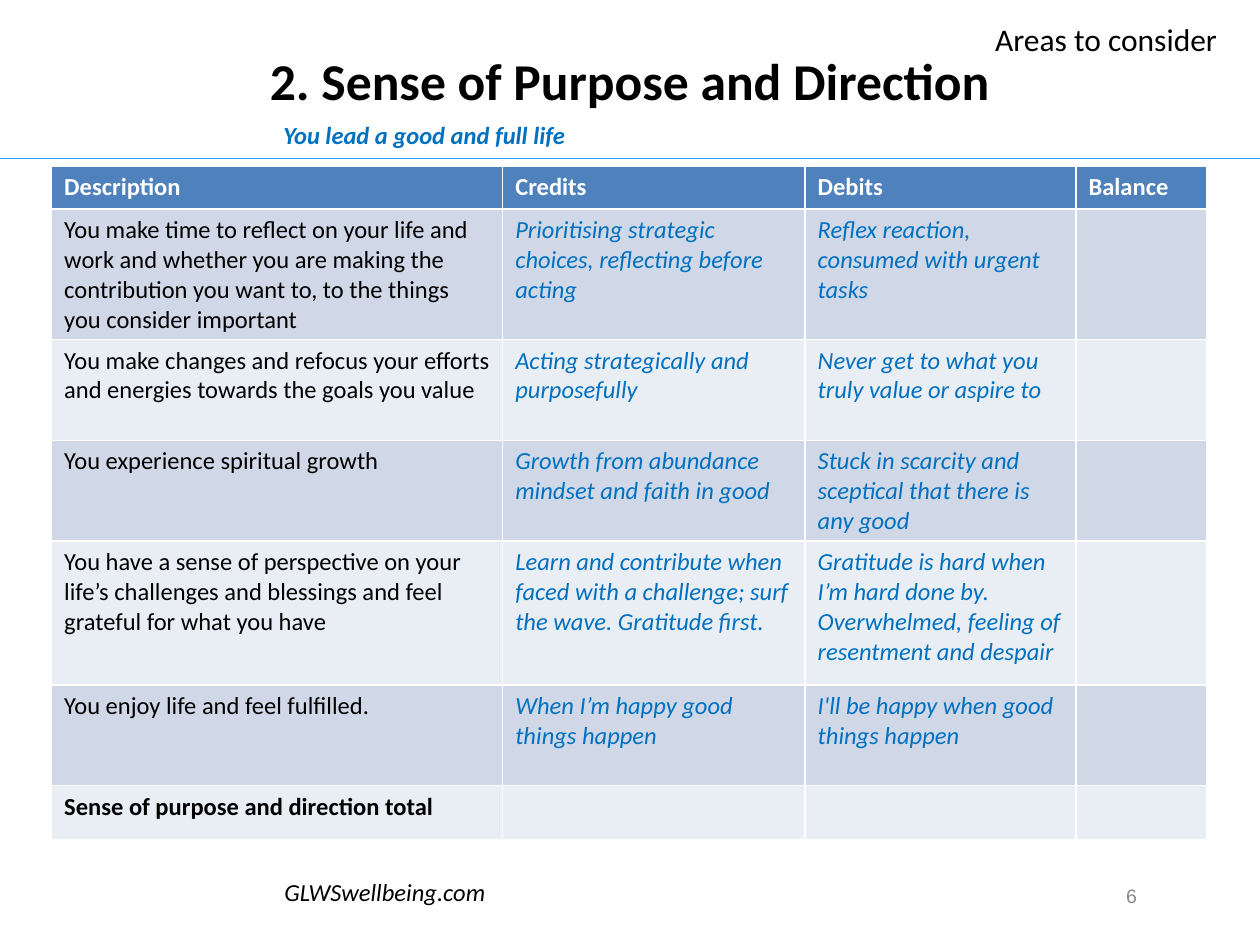
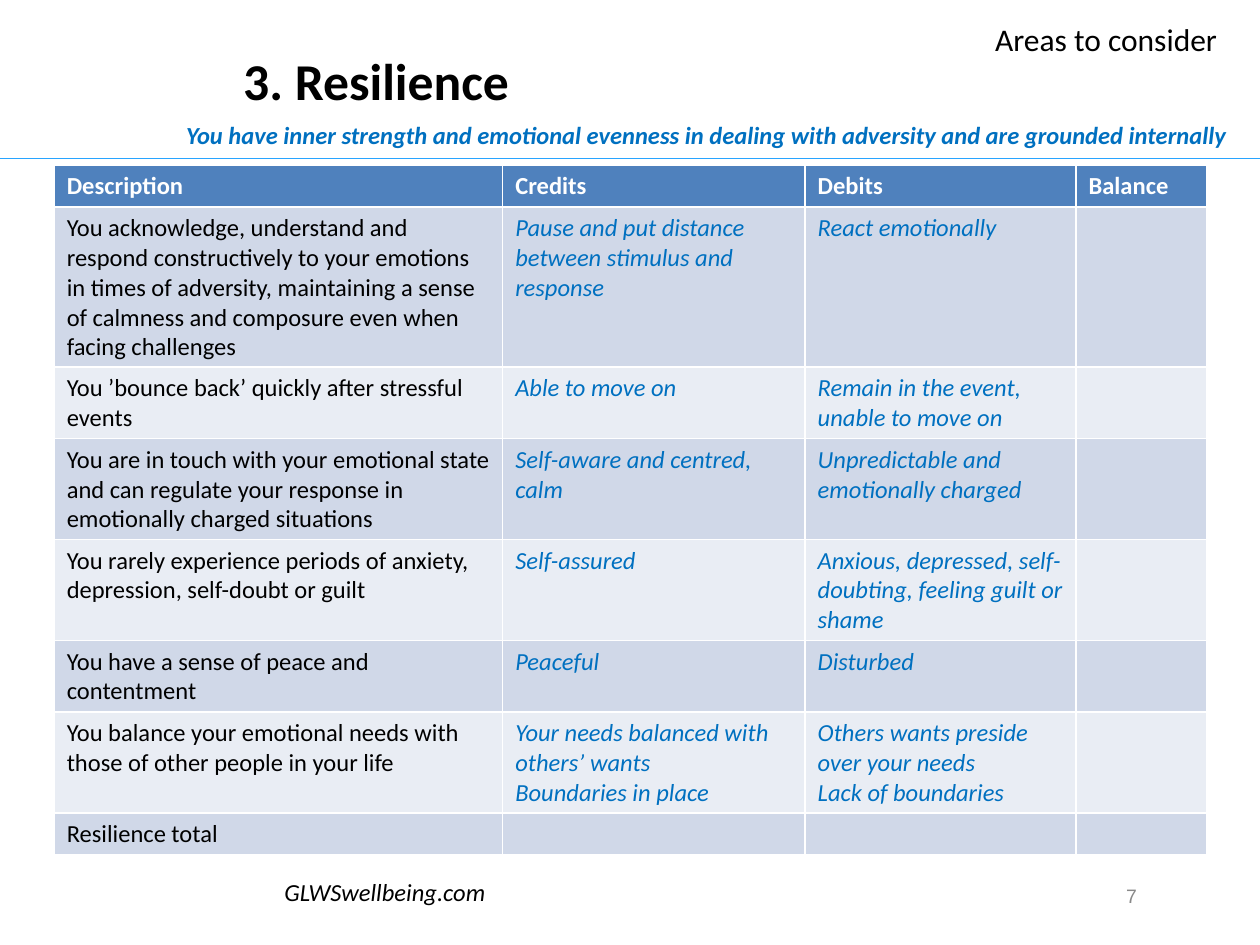
from lxml import etree
from pptx import Presentation
from pptx.dml.color import RGBColor
from pptx.enum.shapes import MSO_CONNECTOR as CONN
from pptx.enum.text import MSO_ANCHOR as ANCHOR, MSO_AUTO_SIZE as AUTO, PP_ALIGN as ALIGN
from pptx.oxml.ns import qn
from pptx.util import Inches, Pt

COLS, ROWS = 10, 7.5
SLIDE_W, SLIDE_H = Inches(10), Inches(7.5)

BLACK = RGBColor(0x00, 0x00, 0x00)
WHITE = RGBColor(0xFF, 0xFF, 0xFF)
GREY = RGBColor(0x89, 0x89, 0x89)
TEXT_BLUE = RGBColor(0x00, 0x70, 0xC0)
RULE_BLUE = RGBColor(0x28, 0xA4, 0xFF)
HEADER_BLUE = RGBColor(0x4F, 0x81, 0xBD)
BANDS = (RGBColor(0xD0, 0xD8, 0xE8), RGBColor(0xE9, 0xED, 0xF4))

TITLE_LAYOUT = 5
BODY_SIZE = 14
RULE_Y = 1.26
HEADINGS = ("Description", "Credits", "Debits", "Balance")

PURPOSE_ROWS = [
    ("You make time to reflect on your life and work and whether you are making the "
     "contribution you want to, to the things you consider important",
     "Prioritising strategic choices, reflecting before acting",
     "Reflex reaction, consumed with urgent tasks"),
    ("You make changes and refocus your efforts and energies towards the goals you value",
     "Acting strategically and purposefully",
     "Never get to what you truly value or aspire to"),
    ("You experience spiritual growth",
     "Growth from abundance mindset and faith in good",
     "Stuck in scarcity and sceptical that there is any good"),
    ("You have a sense of perspective on your life’s challenges and blessings and feel "
     "grateful for what you have",
     "Learn and contribute when faced with a challenge; surf the wave. Gratitude first.",
     "Gratitude is hard when I’m hard done by. Overwhelmed, feeling of resentment and despair"),
    ("You enjoy life and feel fulfilled.",
     "When I’m happy good things happen",
     "I'll be happy when good things happen"),
    ("Sense of purpose and direction total",),
]

RESILIENCE_ROWS = [
    ("You acknowledge, understand and respond constructively to your emotions in times of "
     "adversity, maintaining a sense of calmness and composure even when facing challenges",
     "Pause and put distance between stimulus and response",
     "React emotionally"),
    ("You ’bounce back’ quickly after stressful events",
     "Able to move on",
     "Remain in the event, unable to move on"),
    ("You are in touch with your emotional state and can regulate your response in "
     "emotionally charged situations",
     "Self-aware and centred, calm",
     "Unpredictable and emotionally charged"),
    ("You rarely experience periods of anxiety, depression, self-doubt or guilt",
     "Self-assured",
     "Anxious, depressed, self-doubting, feeling guilt or shame"),
    ("You have a sense of peace and contentment", "Peaceful", "Disturbed"),
    ("You balance your emotional needs with those of other people in your life",
     "Your needs balanced with others’ wants\nBoundaries in place",
     "Others wants preside over your needs\nLack of boundaries"),
    ("Resilience total",),
]


def across(cols):
    return round(SLIDE_W * cols / COLS)


def down(rows):
    return round(SLIDE_H * rows / ROWS)


def place(x, y, w, h):
    return across(x), down(y), across(w), down(h)


def write(tf, text, size=BODY_SIZE, font="Calibri", color=BLACK, bold=False,
          italic=False, align=ALIGN.LEFT, spacing=1.0):
    """Fill a text frame, one paragraph for each line of text."""
    for i, line in enumerate(text.split("\n")):
        p = tf.add_paragraph() if i else tf.paragraphs[0]
        p.alignment, p.line_spacing = align, spacing
        if not line:
            etree.SubElement(p._p, qn("a:endParaRPr"), sz=str(size * 100))
            continue
        r = p.add_run()
        r.text = line
        f = r.font
        f.name, f.size, f.bold, f.italic = font, Pt(size), bold, italic
        f.color.rgb = color


def add_text(s, box, text, wrap=True, anchor=ANCHOR.TOP, **fmt):
    tf = s.shapes.add_textbox(*place(*box)).text_frame
    tf.word_wrap, tf.vertical_anchor = wrap, anchor
    write(tf, text, **fmt)


def add_title(s, text, align, indent):
    sp = s.shapes.title
    sp.left, sp.top, sp.width, sp.height = place(0, 0.01, 10, 1.25)
    tf = sp.text_frame
    tf.auto_size, tf.vertical_anchor = AUTO.NONE, ANCHOR.MIDDLE
    tf.margin_left = across(indent)
    write(tf, text, size=29.5, bold=True, align=align)


def add_rule(s):
    line = s.shapes.add_connector(CONN.STRAIGHT, 0, down(RULE_Y), SLIDE_W, down(RULE_Y))
    line.line.color.rgb, line.line.width = RULE_BLUE, Pt(0.75)
    etree.SubElement(line._element.spPr, qn("a:effectLst"))


def fill_cell(cell, text, fill, **fmt):
    cell.fill.solid()
    cell.fill.fore_color.rgb = fill
    write(cell.text_frame, text, **fmt)


def add_balance_sheet(s, left, top, widths, heights, rows, bold_total):
    box = place(left, top, sum(widths), sum(heights))
    table = s.shapes.add_table(len(heights), len(widths), *box).table
    for col, width in zip(table.columns, widths):
        col.width = across(width)
    for row, height in zip(table.rows, heights):
        row.height = down(height)
    for c, heading in enumerate(HEADINGS):
        fill_cell(table.cell(0, c), heading, HEADER_BLUE, color=WHITE, bold=True)
    for r, texts in enumerate(rows, 1):
        for c in range(len(HEADINGS)):
            fill_cell(table.cell(r, c), texts[c] if c < len(texts) else "",
                      BANDS[(r - 1) % 2],
                      color=TEXT_BLUE if c else BLACK, italic=c > 0,
                      bold=bold_total and r == len(rows))


def add_area_slide(prs, number, title, motto, motto_box, sheet,
                   align=ALIGN.LEFT, indent=0.1):
    s = prs.slides.add_slide(prs.slide_layouts[TITLE_LAYOUT])
    add_rule(s)
    add_title(s, title, align, indent)
    add_text(s, (8.46, 6.91, 1.04, 0.4), str(number), size=11.1, font="Arial",
             color=GREY, align=ALIGN.CENTER, anchor=ANCHOR.MIDDLE)
    add_text(s, motto_box, motto, color=TEXT_BLUE, bold=True, italic=True, spacing=1.5)
    add_balance_sheet(s, **sheet)
    add_text(s, (2.15, 6.91, 1.81, 0.34), "GLWSwellbeing.com", wrap=False,
             italic=True, align=ALIGN.CENTER)
    add_text(s, (7.8, 0.11, 1.98, 0.4), "Areas to consider", wrap=False, size=18)


def main():
    prs = Presentation()
    prs.slide_width, prs.slide_height = SLIDE_W, SLIDE_H
    add_area_slide(
        prs, 6, "2. Sense of Purpose and Direction", "You lead a good and full life",
        (2.15, 0.79, 6.06, 0.42),
        dict(left=0.41, top=1.32, widths=(3.58, 2.4, 2.15, 1.04),
             heights=(0.34, 1.03, 0.8, 0.8, 1.14, 0.8, 0.43),
             rows=PURPOSE_ROWS, bold_total=True),
        align=ALIGN.CENTER)
    add_area_slide(
        prs, 7, "3. Resilience",
        "You have inner strength and emotional evenness in dealing with adversity "
        "and are grounded internally",
        (1.38, 0.79, 8.5, 0.42),
        dict(left=0.43, top=1.31, widths=(3.56, 2.4, 2.15, 1.04),
             heights=(0.33, 1.26, 0.57, 0.8, 0.8, 0.57, 0.8, 0.33),
             rows=RESILIENCE_ROWS, bold_total=False),
        indent=1.93)
    prs.save("out.pptx")


if __name__ == "__main__":
    main()
